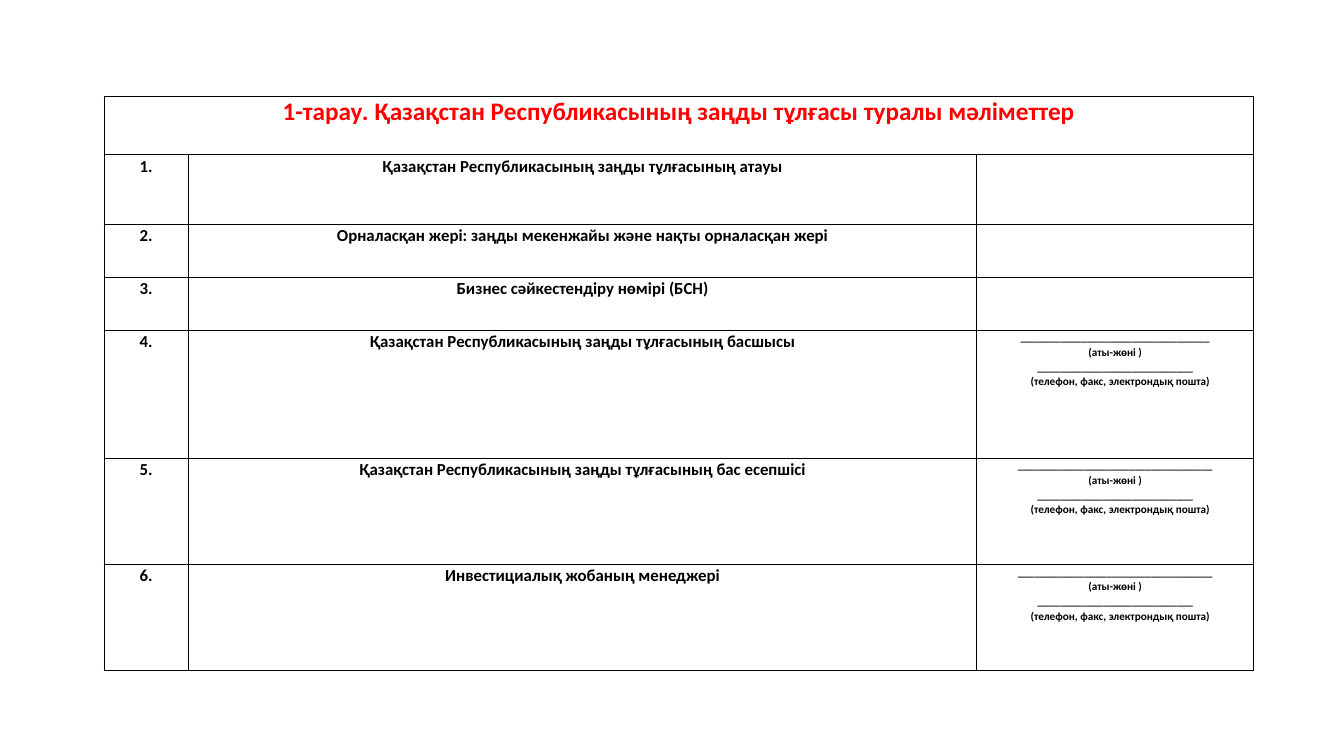
from dataclasses import dataclass

from lxml.etree import SubElement
from pptx import Presentation
from pptx.dml.color import RGBColor
from pptx.enum.text import PP_ALIGN
from pptx.oxml.ns import qn
from pptx.util import Inches, Pt


@dataclass(frozen=True)
class Theme:
    """Colours, font and type sizes of the form."""
    font: str = "Calibri"
    title_color: str = "FF0000"
    text_color: str = "000000"
    border_color: str = "000000"
    title_size: int = 36
    label_size: int = 24
    signature_size: int = 16
    line_spacing: float = 1.07


THEME = Theme()
TITLE = "1-тарау. Қазақстан Республикасының заңды тұлғасы туралы мәліметтер"
COLUMN_WIDTHS = (1.68, 15.64, 5.5)
ROW_HEIGHTS = (1.15, 1.38, 1.05, 1.05, 2.54, 2.11, 2.11)
NAME_CAPTION = "(аты-жөні )"
CONTACT_CAPTION = "(телефон, факс, электрондық пошта)"
CONTACT_LINE_LENGTH = 28
CONTACT_INDENT = 0.2
FIELDS = (
    ("Қазақстан Республикасының заңды тұлғасының атауы", 0),
    ("Орналасқан жері: заңды мекенжайы және нақты орналасқан жері", 0),
    ("Бизнес сәйкестендіру нөмірі (БСН)", 0),
    ("Қазақстан Республикасының заңды тұлғасының басшысы", 34),
    ("Қазақстан Республикасының заңды тұлғасының бас есепшісі", 35),
    ("Инвестициалық жобаның менеджері", 35),
)


def add_borders(cell):
    """Draw a thin solid line on every side of a cell."""
    properties = cell._tc.get_or_add_tcPr()
    for side in ("a:lnL", "a:lnR", "a:lnT", "a:lnB"):
        line = SubElement(properties, qn(side), w=str(Pt(1)))
        fill = SubElement(line, qn("a:solidFill"))
        SubElement(fill, qn("a:srgbClr"), val=THEME.border_color)


def format_cell(cell):
    """Give a cell its borders, margins and clear fill."""
    add_borders(cell)
    cell.fill.background()
    cell.margin_left = cell.margin_right = Inches(0.07)
    cell.margin_top = cell.margin_bottom = 0


def write_cell(cell, text, size, color=THEME.text_color,
               line_spacing=THEME.line_spacing, space_after=0):
    """Write centred bold text, one paragraph per line."""
    cell.text_frame.text = text
    for paragraph in cell.text_frame.paragraphs:
        paragraph.alignment = PP_ALIGN.CENTER
        paragraph.line_spacing = line_spacing
        paragraph.space_after = Pt(space_after)
        for run in paragraph.runs:
            run.font.name = THEME.font
            run.font.size = Pt(size)
            run.font.bold = True
            run.font.color.rgb = RGBColor.from_string(color)


def write_signature(cell, name_line_length):
    """Write the blank lines for a name and contacts with their captions."""
    lines = ("_" * name_line_length, NAME_CAPTION,
             "_" * CONTACT_LINE_LENGTH, CONTACT_CAPTION)
    write_cell(cell, "\n".join(lines), THEME.signature_size)
    contact = cell.text_frame.paragraphs[-1]
    contact._p.get_or_add_pPr().set("marL", str(Inches(CONTACT_INDENT)))


def add_form_table(slide):
    """Add the empty bordered table with a merged title row."""
    frame = slide.shapes.add_table(
        len(ROW_HEIGHTS), len(COLUMN_WIDTHS), Inches(2.06), Inches(1.92),
        Inches(sum(COLUMN_WIDTHS)), Inches(sum(ROW_HEIGHTS)))
    table = frame.table
    table.first_row = table.horz_banding = False
    for column, width in zip(table.columns, COLUMN_WIDTHS):
        column.width = Inches(width)
    for row, height in zip(table.rows, ROW_HEIGHTS):
        row.height = Inches(height)
    for cell in table.iter_cells():
        format_cell(cell)
    table.cell(0, 0).merge(table.cell(0, len(COLUMN_WIDTHS) - 1))
    return table


def fill_form(table):
    """Write the title and the numbered fields."""
    write_cell(table.cell(0, 0), TITLE, THEME.title_size,
               THEME.title_color, line_spacing=1.0)
    for number, (label, name_line_length) in enumerate(FIELDS, start=1):
        write_cell(table.cell(number, 0), f"{number}.",
                   THEME.label_size, space_after=8)
        write_cell(table.cell(number, 1), label, THEME.label_size)
        if name_line_length:
            write_signature(table.cell(number, 2), name_line_length)


def main():
    """Build the form slide and save it."""
    presentation = Presentation()
    presentation.slide_width = Inches(26.67)
    presentation.slide_height = Inches(15)
    slide = presentation.slides.add_slide(presentation.slide_layouts[6])
    fill_form(add_form_table(slide))
    presentation.save("out.pptx")


if __name__ == "__main__":
    main()
